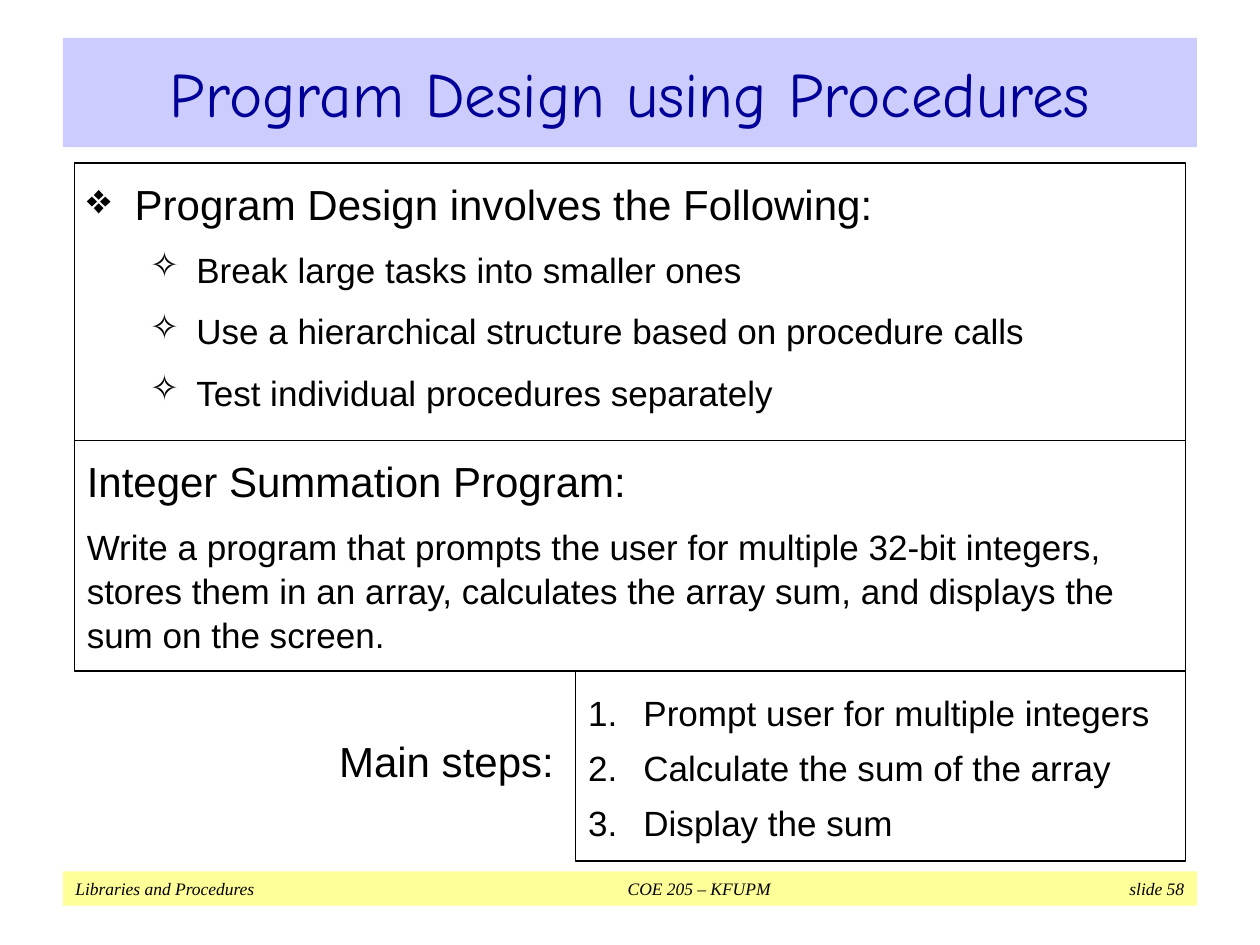
"""Build the slide on program design using procedures."""
import pptx
import pptx.dml.color
import pptx.enum.shapes
import pptx.enum.text
import pptx.oxml.ns
import pptx.util
from lxml import etree

Pt = pptx.util.Pt
ALIGN = pptx.enum.text.PP_ALIGN
ANCHOR = pptx.enum.text.MSO_ANCHOR
COLORS = {"title_bar": "CCCCFF", "title": "000099", "footer_bar": "FFFF99",
          "black": "000000", "white": "FFFFFF"}
DIAMOND = ("buChar", {"char": "❖"})
STAR = ("buChar", {"char": "✧"})
NUMBER = ("buAutoNum", {"type": "arabicPeriod"})
LEFT, WIDTH = 42.5, 635


def rgb(name):
    return pptx.dml.color.RGBColor.from_string(COLORS[name])


def add_box(s, x, y, w, h, fill=None, line=None, pad=(3.6, 3.6), anchor=ANCHOR.TOP):
    sp = s.shapes.add_shape(pptx.enum.shapes.MSO_SHAPE.RECTANGLE, Pt(x), Pt(y), Pt(w), Pt(h))
    sp.shadow.inherit = False
    if fill:
        sp.fill.solid()
        sp.fill.fore_color.rgb = rgb(fill)
    else:
        sp.fill.background()
    if line:
        sp.line.color.rgb = rgb(line)
        sp.line.width = Pt(0.75)
    else:
        sp.line.fill.background()
    tf = sp.text_frame
    tf.word_wrap = True
    tf.vertical_anchor = anchor
    tf.margin_top, tf.margin_bottom = Pt(pad[0]), Pt(pad[1])
    return tf


def add_child(parent, tag, attributes):
    return etree.SubElement(parent, pptx.oxml.ns.qn("a:" + tag), attributes)


def set_bullet(p, bullet, margin, hang):
    pPr = p._p.get_or_add_pPr()
    pPr.set("marL", str(Pt(margin)))
    pPr.set("indent", str(-Pt(hang)))
    add_child(pPr, *bullet)


def set_tabs(p, stops):
    tabs = add_child(p._p.get_or_add_pPr(), "tabLst", {})
    for position, align in stops:
        add_child(tabs, "tab", {"pos": str(Pt(position)), "algn": align})


def write(p, text, size, font="Arial", color="black", italic=False, align=ALIGN.LEFT):
    p.text = text
    p.alignment = align
    for r in p.runs:
        r.font.size = Pt(size)
        r.font.name = font
        r.font.italic = italic
        r.font.color.rgb = rgb(color)


def write_lines(tf, lines, gap):
    for i, (text, size, bullet) in enumerate(lines):
        p = tf.add_paragraph() if i else tf.paragraphs[0]
        write(p, text, size)
        p.line_spacing = 1.05
        p.space_before = Pt(size * gap if i else 0)
        if bullet:
            set_bullet(p, *bullet)


def add_title(s):
    tf = add_box(s, 36, 21.6, 648, 62.6, fill="title_bar", anchor=ANCHOR.MIDDLE)
    write(tf.paragraphs[0], "Program Design using Procedures", 36, "Comic Neue", "title",
          align=ALIGN.CENTER)


def add_footer(s):
    tf = add_box(s, 36, 498, 648, 19.6, fill="footer_bar", anchor=ANCHOR.MIDDLE)
    p = tf.paragraphs[0]
    write(p, "Libraries and Procedures\tCOE 205 – KFUPM\tslide 58", 10, "Times New Roman",
          italic=True)
    set_tabs(p, [(356.4, "ctr"), (633.6, "r")])


def add_label(s, x, y, w, h, text):
    tf = s.shapes.add_textbox(Pt(x), Pt(y), Pt(w), Pt(h)).text_frame
    tf.word_wrap = False
    write(tf.paragraphs[0], text, 24, align=ALIGN.CENTER)
    tf.paragraphs[0].line_spacing = 1.05


def main():
    prs = pptx.Presentation()
    prs.slide_width, prs.slide_height = Pt(720), Pt(540)
    s = prs.slides.add_slide(prs.slide_layouts[6])
    add_footer(s)
    add_title(s)

    design = add_box(s, LEFT, 93.2, WIDTH, 158.4, line="black", pad=(7.2, 0))
    points = ["Break large tasks into smaller ones",
              "Use a hierarchical structure based on procedure calls",
              "Test individual procedures separately"]
    write_lines(design, [("Program Design involves the Following:", 24, (DIAMOND, 27.4, 27.4))]
                + [(point, 20, (STAR, 62.6, 26.6)) for point in points], 0.5)

    summation = add_box(s, LEFT, 251.6, WIDTH, 131.8, line="black", pad=(7.2, 0))
    write_lines(summation, [
        ("Integer Summation Program:", 24, None),
        ("Write a program that prompts the user for multiple 32-bit integers, stores them in "
         "an array, calculates the array sum, and displays the sum on the screen.", 20, None),
    ], 0.5)

    add_label(s, 186.4, 415.4, 137.4, 36, "Main steps:")
    steps = add_box(s, 329, 383.4, 348.5, 108.6, fill="white", line="black", pad=(10.8, 10.8))
    write_lines(steps, [(step, 20, (NUMBER, 31.6, 31.6)) for step in (
        "Prompt user for multiple integers",
        "Calculate the sum of the array",
        "Display the sum")], 0.3)
    prs.save("out.pptx")


if __name__ == "__main__":
    main()
